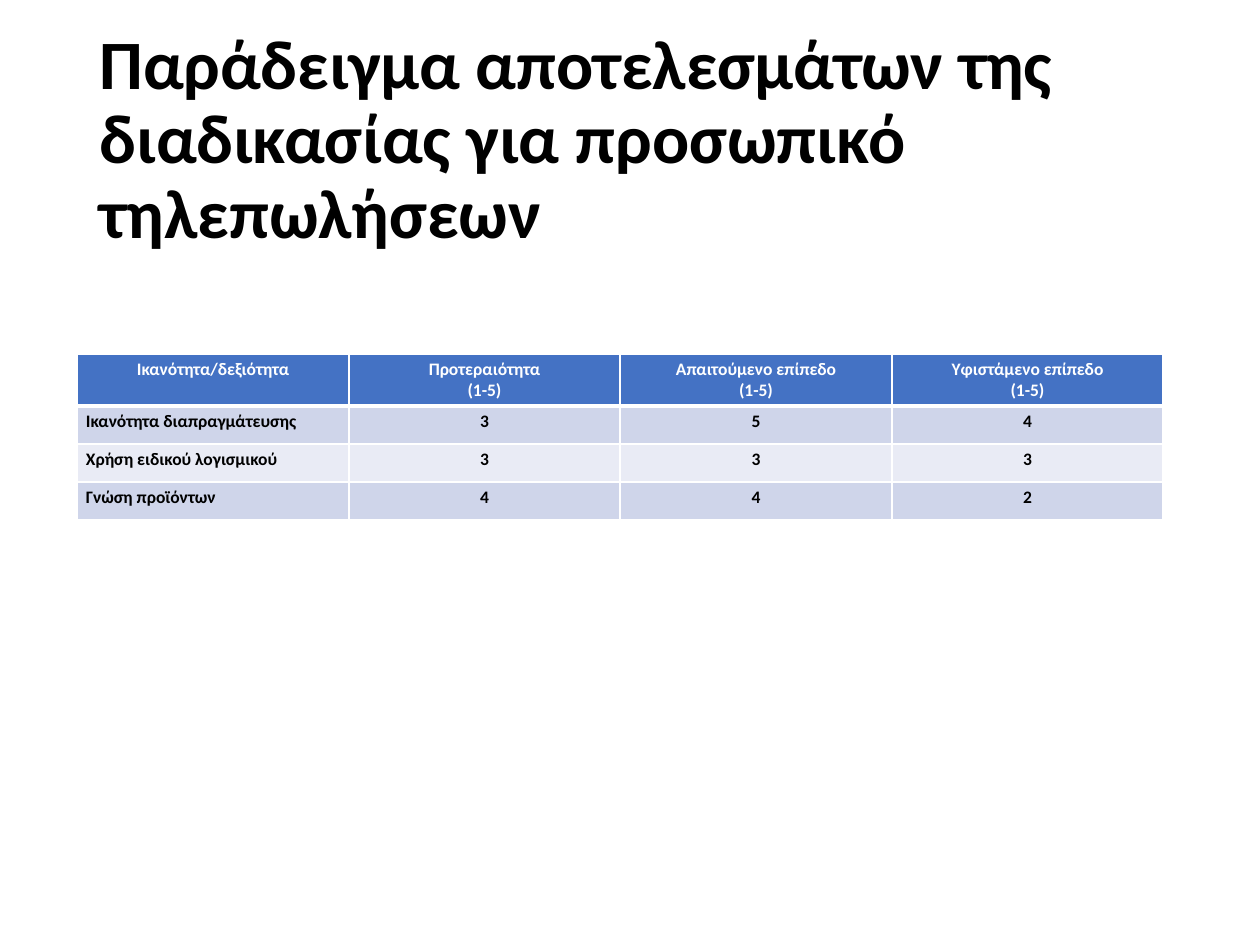
from dataclasses import dataclass

from lxml import etree
from pptx import Presentation
from pptx.dml.color import RGBColor
from pptx.enum.text import MSO_ANCHOR, PP_ALIGN
from pptx.oxml.ns import qn
from pptx.util import Pt

EMU_PER_PX = 914400 / 126
LEFT, CENTER = PP_ALIGN.LEFT, PP_ALIGN.CENTER
TOP, MIDDLE = MSO_ANCHOR.TOP, MSO_ANCHOR.MIDDLE
FONT = "Calibri"
COLORS = {
    "black": "000000",
    "white": "FFFFFF",
    "header": "4472C4",
    "odd_row": "CFD5EA",
    "even_row": "E9EBF5",
}
TITLE = "Παράδειγμα αποτελεσμάτων της διαδικασίας για προσωπικό τηλεπωλήσεων"
HEADERS = (
    "Ικανότητα/δεξιότητα",
    "Προτεραιότητα\n(1-5)",
    "Απαιτούμενο επίπεδο\n(1-5)",
    "Υφιστάμενο επίπεδο\n(1-5)",
)
COLUMN_WIDTHS = (272, 271, 272, 271)
HEADER_HEIGHT, ROW_HEIGHT = 52, 38
THIN, THICK = 1, 3


@dataclass(frozen=True)
class Skill:
    name: str
    priority: int
    required_level: int
    current_level: int

    def texts(self) -> tuple[str, ...]:
        levels = (self.priority, self.required_level, self.current_level)
        return (self.name, *map(str, levels))


SKILLS = (
    Skill("Ικανότητα διαπραγμάτευσης", 3, 5, 4),
    Skill("Χρήση ειδικού λογισμικού", 3, 3, 3),
    Skill("Γνώση προϊόντων", 4, 4, 2),
)


def px(length: int) -> int:
    return round(length * EMU_PER_PX)


def write_text(text_frame, text: str, *, size: float, color: str,
               align=LEFT, line_spacing: float = 1.0) -> None:
    text_frame.word_wrap = True
    for index, line in enumerate(text.split("\n")):
        paragraph = text_frame.paragraphs[0] if index == 0 else text_frame.add_paragraph()
        paragraph.alignment = align
        paragraph.line_spacing = line_spacing
        run = paragraph.add_run()
        run.text = line
        run.font.name = FONT
        run.font.size = Pt(size)
        run.font.bold = True
        run.font.color.rgb = RGBColor.from_string(COLORS[color])


def set_borders(cell, *, top: int, bottom: int) -> None:
    properties = cell._tc.get_or_add_tcPr()
    for tag, width in (("a:lnL", THIN), ("a:lnR", THIN), ("a:lnT", top), ("a:lnB", bottom)):
        line = etree.SubElement(properties, qn(tag), w=str(Pt(width)))
        fill = etree.SubElement(line, qn("a:solidFill"))
        etree.SubElement(fill, qn("a:srgbClr"), val=COLORS["white"])


def draw_title(slide) -> None:
    shape = slide.shapes.add_textbox(px(87), px(50), px(1086), px(183))
    shape.text_frame.vertical_anchor = MIDDLE
    write_text(shape.text_frame, TITLE, size=39.6, color="black", line_spacing=0.9)


def draw_cell(cell, text: str, row: int, column: int) -> None:
    is_header = row == 0
    fill = "header" if is_header else "odd_row" if row % 2 else "even_row"
    cell.margin_left = cell.margin_right = px(9)
    cell.margin_top = cell.margin_bottom = px(5)
    cell.vertical_anchor = TOP
    set_borders(cell, top=THICK if row == 1 else THIN, bottom=THICK if is_header else THIN)
    cell.fill.solid()
    cell.fill.fore_color.rgb = RGBColor.from_string(COLORS[fill])
    write_text(cell.text_frame, text, size=10,
               color="white" if is_header else "black",
               align=CENTER if is_header or column > 0 else LEFT)


def draw_skills_table(slide) -> None:
    rows = (HEADERS, *(skill.texts() for skill in SKILLS))
    height = HEADER_HEIGHT + ROW_HEIGHT * len(SKILLS)
    table = slide.shapes.add_table(len(rows), len(HEADERS), px(77), px(354),
                                   px(sum(COLUMN_WIDTHS)), px(height)).table
    for column, width in zip(table.columns, COLUMN_WIDTHS):
        column.width = px(width)
    for row, texts in enumerate(rows):
        table.rows[row].height = px(ROW_HEIGHT if row else HEADER_HEIGHT)
        for column, text in enumerate(texts):
            draw_cell(table.cell(row, column), text, row, column)


def main() -> None:
    presentation = Presentation()
    presentation.slide_width = px(1260)
    presentation.slide_height = px(945)
    slide = presentation.slides.add_slide(presentation.slide_layouts[6])
    draw_title(slide)
    draw_skills_table(slide)
    presentation.save("out.pptx")


if __name__ == "__main__":
    main()
